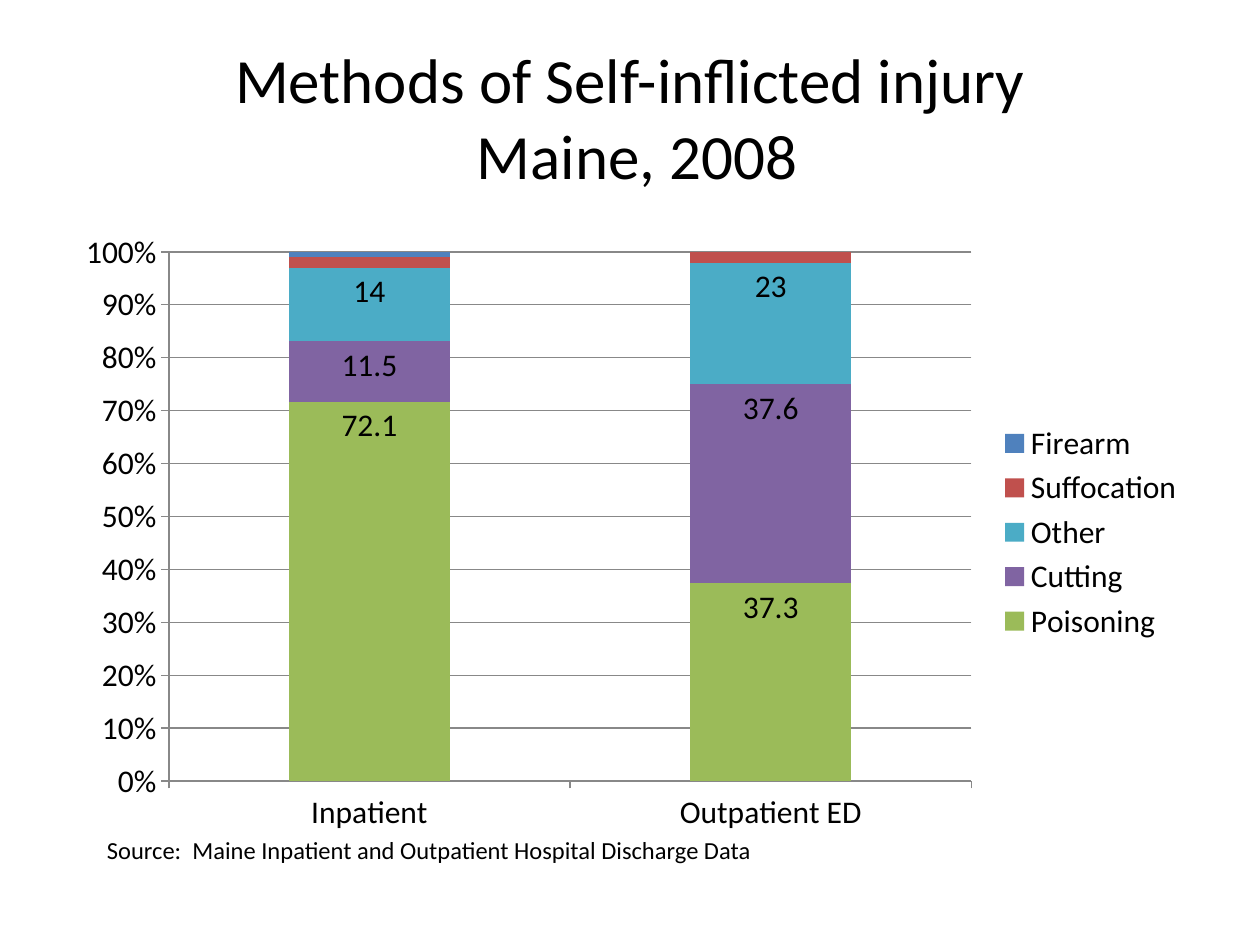
import dataclasses
import typing

import lxml.etree
import pptx
import pptx.chart.data
import pptx.dml.color
import pptx.enum.chart
import pptx.enum.text
import pptx.oxml.ns
import pptx.util

Inches = pptx.util.Inches
Pt = pptx.util.Pt
RGBColor = pptx.dml.color.RGBColor
Align = pptx.enum.text.PP_ALIGN
Anchor = pptx.enum.text.MSO_ANCHOR
qn = pptx.oxml.ns.qn

FONT = "Calibri"
BLACK = RGBColor(0x00, 0x00, 0x00)
GRAY = RGBColor(0x88, 0x88, 0x88)
GREEN = RGBColor(0x9B, 0xBB, 0x59)
PURPLE = RGBColor(0x80, 0x64, 0xA2)
TEAL = RGBColor(0x4B, 0xAC, 0xC6)
RED = RGBColor(0xC0, 0x50, 0x4D)
BLUE = RGBColor(0x4F, 0x81, 0xBD)


@dataclasses.dataclass
class Box:
    left: float
    top: float
    width: float
    height: float

    def lengths(self) -> list[int]:
        return [Inches(n) for n in dataclasses.astuple(self)]


@dataclasses.dataclass
class Method:
    name: str
    rates: tuple[float, float]
    color: RGBColor
    label: bool = False


GROUPS = ("Inpatient", "Outpatient ED")
METHODS = (
    Method("Poisoning", (72.1, 37.3), GREEN, True),
    Method("Cutting", (11.5, 37.6), PURPLE, True),
    Method("Other", (14, 23), TEAL, True),
    Method("Suffocation", (2, 2), RED),
    Method("Firearm", (1, 0), BLUE),
)
FRAME = Box(0.5, 1.75, 9, 4.95)
PLOT = Box(1.34, 2, 6.37, 4.2)


def set_font(font: typing.Any, size: int) -> None:
    font.name = FONT
    font.size = Pt(size)
    font.color.rgb = BLACK


def add_text(slide: typing.Any, box: Box, lines: tuple[str, ...], size: int,
             align: Align, anchor: Anchor) -> None:
    frame = slide.shapes.add_textbox(*box.lengths()).text_frame
    frame.word_wrap = True
    frame.vertical_anchor = anchor
    para = frame.paragraphs[0]
    para.alignment = align
    for i, line in enumerate(lines):
        if i:
            para.add_line_break()
        run = para.add_run()
        run.text = line
        set_font(run.font, size)


def place_plot(chart: typing.Any) -> None:
    """Fix the inner plot area as shares of the chart frame."""
    area = chart.element.find(".//" + qn("c:plotArea"))
    layout = area.find(qn("c:layout"))
    if layout is None:
        layout = lxml.etree.Element(qn("c:layout"))
        area.insert(0, layout)
    manual = lxml.etree.SubElement(layout, qn("c:manualLayout"))
    marks = {
        "layoutTarget": "inner", "xMode": "edge", "yMode": "edge",
        "x": (PLOT.left - FRAME.left) / FRAME.width,
        "y": (PLOT.top - FRAME.top) / FRAME.height,
        "w": PLOT.width / FRAME.width,
        "h": PLOT.height / FRAME.height,
    }
    for tag, val in marks.items():
        lxml.etree.SubElement(manual, qn("c:" + tag)).set("val", str(val))


def style_line(line: typing.Any) -> None:
    line.color.rgb = GRAY
    line.width = Pt(0.75)


def add_chart(slide: typing.Any) -> None:
    data = pptx.chart.data.CategoryChartData()
    data.categories = GROUPS
    for method in METHODS:
        data.add_series(method.name, method.rates)
    kind = pptx.enum.chart.XL_CHART_TYPE.COLUMN_STACKED_100
    chart = slide.shapes.add_chart(kind, *FRAME.lengths(), data).chart
    set_font(chart.font, 18)
    chart.has_title = False
    place_plot(chart)

    # Columns
    plot = chart.plots[0]
    plot.vary_by_categories = False
    plot.gap_width = 150
    plot.overlap = 100
    for method, series in zip(METHODS, plot.series):
        series.format.fill.solid()
        series.format.fill.fore_color.rgb = method.color
        series.format.line.fill.background()
        if method.label:
            labels = series.data_labels
            labels.show_value = True
            labels.position = pptx.enum.chart.XL_LABEL_POSITION.INSIDE_END
            set_font(labels.font, 18)

    # Axes
    for axis in (chart.category_axis, chart.value_axis):
        axis.major_tick_mark = pptx.enum.chart.XL_TICK_MARK.OUTSIDE
        axis.minor_tick_mark = pptx.enum.chart.XL_TICK_MARK.NONE
        style_line(axis.format.line)
    rate = chart.value_axis
    rate.minimum_scale, rate.maximum_scale, rate.major_unit = 0, 1, 0.1
    rate.tick_labels.number_format = "0%"
    rate.tick_labels.number_format_is_linked = False
    rate.has_major_gridlines = True
    style_line(rate.major_gridlines.format.line)

    # Legend
    chart.has_legend = True
    chart.legend.position = pptx.enum.chart.XL_LEGEND_POSITION.RIGHT
    chart.legend.include_in_layout = False
    set_font(chart.legend.font, 18)


def main() -> None:
    deck = pptx.Presentation()
    deck.slide_width, deck.slide_height = Inches(10), Inches(7.5)
    slide = deck.slides.add_slide(deck.slide_layouts[6])

    # Title, chart and source line
    add_text(slide, Box(0.5, 0.3, 9, 1.25),
             ("Methods of Self-inflicted injury", " Maine, 2008"),
             36, Align.CENTER, Anchor.MIDDLE)
    add_chart(slide)
    add_text(slide, Box(0.75, 6.58, 7.58, 0.34),
             ("Source:  Maine Inpatient and Outpatient Hospital Discharge Data",),
             14, Align.LEFT, Anchor.TOP)
    deck.save("out.pptx")


if __name__ == "__main__":
    main()
